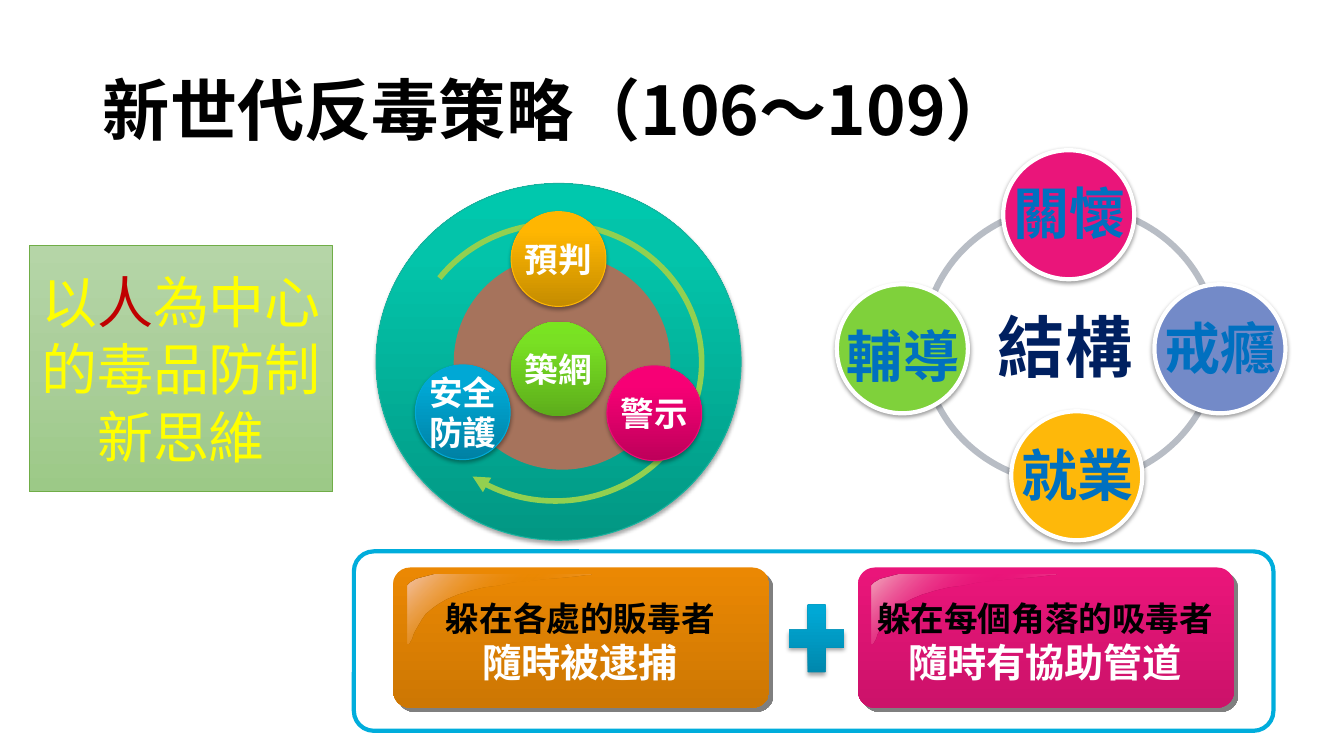
from dataclasses import dataclass

from lxml.etree import SubElement
from pptx import Presentation
from pptx.dml.color import RGBColor
from pptx.enum.shapes import MSO_SHAPE
from pptx.enum.text import MSO_ANCHOR, MSO_AUTO_SIZE, PP_ALIGN
from pptx.oxml.ns import qn
from pptx.util import Pt

PX = 9144


@dataclass(frozen=True)
class Theme:
    heading_font: str = "Noto Sans CJK SC"
    plain_font: str = "Arial"
    title_size: int = 48
    display_size: int = 40
    strong_size: int = 28
    label_size: int = 24
    white: str = "FFFFFF"
    black: str = "000000"
    yellow: str = "FFFF00"
    red: str = "C00000"
    navy: str = "002060"
    blue: str = "0070C0"
    frame: str = "00ADDC"
    brown: str = "A6735C"
    arc: str = "92D050"
    ring: str = "4E5B6F"
    green_line: str = "70AD47"
    green: tuple = ((0, "B5D5A7"), (50, "AACE9A"), (100, "9CC987"))
    teal: tuple = ((0, "029783"), (80, "03C4AA"), (100, "00C8AD"))
    gold: tuple = ((0, "C58C00"), (80, "FFB601"), (100, "FFB602"))
    pink: tuple = ((0, "BE005A"), (80, "F70075"), (100, "F80076"))
    sky: tuple = ((0, "0081A4"), (80, "00A8D5"), (100, "00A8D6"))
    lime: tuple = ((0, "5DAD1B"), (80, "79E023"), (100, "79E520"))
    raised: tuple = (35, 3.1, 1.8, 90)
    node: tuple = (38, 3.1, 1.6, 90)
    card: tuple = (50, 0, 4.2, 45)
    lettering: tuple = (100, 0, 1.5, 45)


THEME = Theme()


@dataclass(frozen=True)
class Box:
    left: int
    top: int
    width: int
    height: int

    def inner(self, left, top, width, height):
        return Box(self.left + left, self.top + top, width, height)

    def emu(self):
        return [n * PX for n in (self.left, self.top, self.width, self.height)]


def add_shadow(effects, shadow):
    alpha, blur, distance, angle = shadow
    outer = SubElement(effects, qn("a:outerShdw"), blurRad=str(Pt(blur)),
                       dist=str(Pt(distance)), dir=str(angle * 60000),
                       algn="tl", rotWithShape="0")
    color = SubElement(outer, qn("a:srgbClr"), val=THEME.black)
    SubElement(color, qn("a:alpha"), val=str(alpha * 1000))


def paint(shape, fill=None, angle=270, line=None, width=0.75, shadow=None):
    if fill is None:
        shape.fill.background()
    elif isinstance(fill, str):
        shape.fill.solid()
        shape.fill.fore_color.rgb = RGBColor.from_string(fill)
    else:
        shape.fill.gradient()
        shape.fill.gradient_angle = (360 - angle) % 360
        stops = shape._element.spPr.find(qn("a:gradFill")).find(qn("a:gsLst"))
        for stop in list(stops):
            stops.remove(stop)
        for place, value, *alpha in fill:
            stop = SubElement(stops, qn("a:gs"), pos=str(place * 1000))
            color = SubElement(stop, qn("a:srgbClr"), val=value)
            for part in alpha:
                SubElement(color, qn("a:alpha"), val=str(part * 1000))
    if line is None:
        shape.line.fill.background()
    else:
        shape.line.color.rgb = RGBColor.from_string(line)
        shape.line.width = Pt(width)
    shape.shadow.inherit = False
    if shadow:
        add_shadow(shape._element.spPr.find(qn("a:effectLst")), shadow)
    return shape


def add_figure(page, kind, box, **look):
    return paint(page.shapes.add_shape(kind, *box.emu()), **look)


def add_span(para, text, size, color, font=THEME.heading_font, bold=True, raised=False):
    span = para.add_run()
    span.text = text
    span.font.size = Pt(size)
    span.font.bold = bold
    span.font.color.rgb = RGBColor.from_string(color)
    properties = span._r.get_or_add_rPr()
    if raised:
        properties.set("spc", "50")
        add_shadow(SubElement(properties, qn("a:effectLst")), THEME.lettering)
    span.font.name = font
    SubElement(properties, qn("a:ea"), typeface=font)


def write(shape, lines, align=PP_ALIGN.CENTER, anchor=MSO_ANCHOR.MIDDLE, wrap=False):
    frame = shape.text_frame
    frame.word_wrap = wrap
    frame.auto_size = MSO_AUTO_SIZE.NONE
    frame.vertical_anchor = anchor
    for index, spans in enumerate(lines):
        para = frame.add_paragraph() if index else frame.paragraphs[0]
        para.alignment = align
        for span in spans:
            add_span(para, *span)


def add_title(page, box):
    title = page.shapes.title
    title.left, title.top, title.width, title.height = box.emu()
    write(title, [[("新世代反毒策略（106～109）", THEME.title_size, THEME.black)]],
          PP_ALIGN.LEFT, wrap=True)
    title.text_frame.paragraphs[0].line_spacing = 0.9


def add_idea(page, box):
    panel = add_figure(page, MSO_SHAPE.RECTANGLE, box, fill=THEME.green, angle=90,
                       line=THEME.green_line, width=0.5)
    parts = (("以", THEME.yellow), ("人", THEME.red), ("為中心的毒品防制新思維", THEME.yellow))
    write(panel, [[(text, THEME.display_size, color, THEME.plain_font, False)
                   for text, color in parts]], wrap=True)


def add_net(page, box):
    add_figure(page, MSO_SHAPE.OVAL, box, fill=THEME.teal, line="16B39E", shadow=THEME.raised)
    add_figure(page, MSO_SHAPE.OVAL, box.inner(77, 71, 215, 213), fill=THEME.brown)
    arc = add_figure(page, MSO_SHAPE.ARC, box.inner(33, 40, 290, 275),
                     line=THEME.arc, width=4)
    for index, degrees in enumerate((216, 126)):
        arc.adjustments[index] = degrees * 0.6
    SubElement(arc.line._get_or_add_ln(), qn("a:tailEnd"), type="triangle")
    balls = (
        (134, 28, ("預判",), THEME.gold, "FEB604"),
        (229, 181, ("警示",), THEME.pink, "EA0F77"),
        (39, 180, ("安全", "防護"), THEME.sky, "00A9D7"),
        (134, 137, ("築網",), THEME.lime, None),
    )
    for left, top, words, fill, line in balls:
        ball = add_figure(page, MSO_SHAPE.OVAL, box.inner(left, top, 94, 94),
                          fill=fill, line=line, shadow=THEME.raised)
        write(ball, [[(word, THEME.label_size, THEME.white)] for word in words])


def add_label(page, box, text, size, color, raised=False):
    label = page.shapes.add_textbox(*box.emu())
    write(label, [[(text, size, color, THEME.heading_font, True, raised)]],
          PP_ALIGN.LEFT, MSO_ANCHOR.TOP)


def add_structure(page, box):
    ring = add_figure(page, MSO_SHAPE.OVAL, box.inner(86, 55, 291, 276),
                      line=THEME.ring, width=4.5)
    color = ring.line._get_or_add_ln().find(qn("a:solidFill"))[0]
    SubElement(color, qn("a:alpha"), val="40000")
    add_label(page, box.inner(150, 149, 156, 91), "結構", THEME.title_size, THEME.navy)
    nodes = (
        (173, 259, "就業", "FEB80A", 24),
        (165, 0, "關懷", "EA157A", 23),
        (315, 133, "戒癮", "738AC8", 24),
        (0, 133, "輔導", "7FD13B", 32),
    )
    for left, top, text, fill, drop in nodes:
        add_figure(page, MSO_SHAPE.OVAL, box.inner(left, top, 130, 128), fill=fill,
                   line=THEME.white, width=3, shadow=THEME.node)
        add_label(page, box.inner(left, top + drop, 134, 77), text,
                  THEME.display_size, THEME.blue, True)


def curve(start, first, second, end, steps=12):
    for step in range(1, steps + 1):
        t = step / steps
        weights = ((1 - t) ** 3, 3 * t * (1 - t) ** 2, 3 * t * t * (1 - t), t ** 3)
        yield tuple(round(sum(w * p[axis] for w, p in zip(weights, (start, first, second, end))))
                    for axis in (0, 1))


def add_card(page, box, top_color, bottom_color, gloss, lines):
    card = add_figure(page, MSO_SHAPE.ROUNDED_RECTANGLE, box, angle=90, shadow=THEME.card,
                      fill=((0, top_color), (100, bottom_color)))
    card.adjustments[0] = 0.119
    shine = box.inner(14, 7, 186, 69)
    points = [*curve((37, 0), (17, 0), (0, 6), (0, 13)), (0, 68),
              *curve((0, 68), (8, 69), (4, 35), (50, 20)),
              *curve((50, 20), (97, 4), (186, 3), (183, 0))]
    outline = page.shapes.build_freeform(37, 0, scale=PX)
    outline.add_line_segments(points, close=True)
    paint(outline.convert_to_shape(shine.left * PX, shine.top * PX), angle=45,
          fill=((0, gloss), (50, top_color, 0), (100, gloss)))
    label = page.shapes.add_textbox(*box.inner(-2, 25, 375, 98).emu())
    styles = ((THEME.label_size, THEME.black), (THEME.strong_size, THEME.white))
    write(label, [[(text, *style)] for text, style in zip(lines, styles)],
          anchor=MSO_ANCHOR.TOP, wrap=True)


def add_outcome(page, box):
    frame = add_figure(page, MSO_SHAPE.ROUNDED_RECTANGLE, box, fill=THEME.white,
                       line=THEME.frame, width=3)
    frame.adjustments[0] = 0.111
    cards = (
        (39, "EB8803", "CD7703", "F3C3AA", ("躲在各處的販毒者", "隨時被逮捕")),
        (500, "EA157A", "CC126A", "F3ABBE", ("躲在每個角落的吸毒者", "隨時有協助管道")),
    )
    for left, *look in cards:
        add_card(page, box.inner(left, 16, 373, 139), *look)
    add_figure(page, MSO_SHAPE.MATH_PLUS, box.inner(422, 41, 74, 91),
               fill=THEME.sky, shadow=THEME.raised)


def main():
    deck = Presentation()
    deck.slide_width, deck.slide_height = 1333 * PX, 750 * PX
    page = deck.slides.add_slide(deck.slide_layouts[5])
    add_title(page, Box(92, 40, 1150, 145))
    add_idea(page, Box(29, 243, 301, 245))
    add_net(page, Box(373, 182, 362, 354))
    add_outcome(page, Box(351, 547, 912, 178))
    add_structure(page, Box(830, 149, 445, 387))
    deck.save("out.pptx")


if __name__ == "__main__":
    main()
